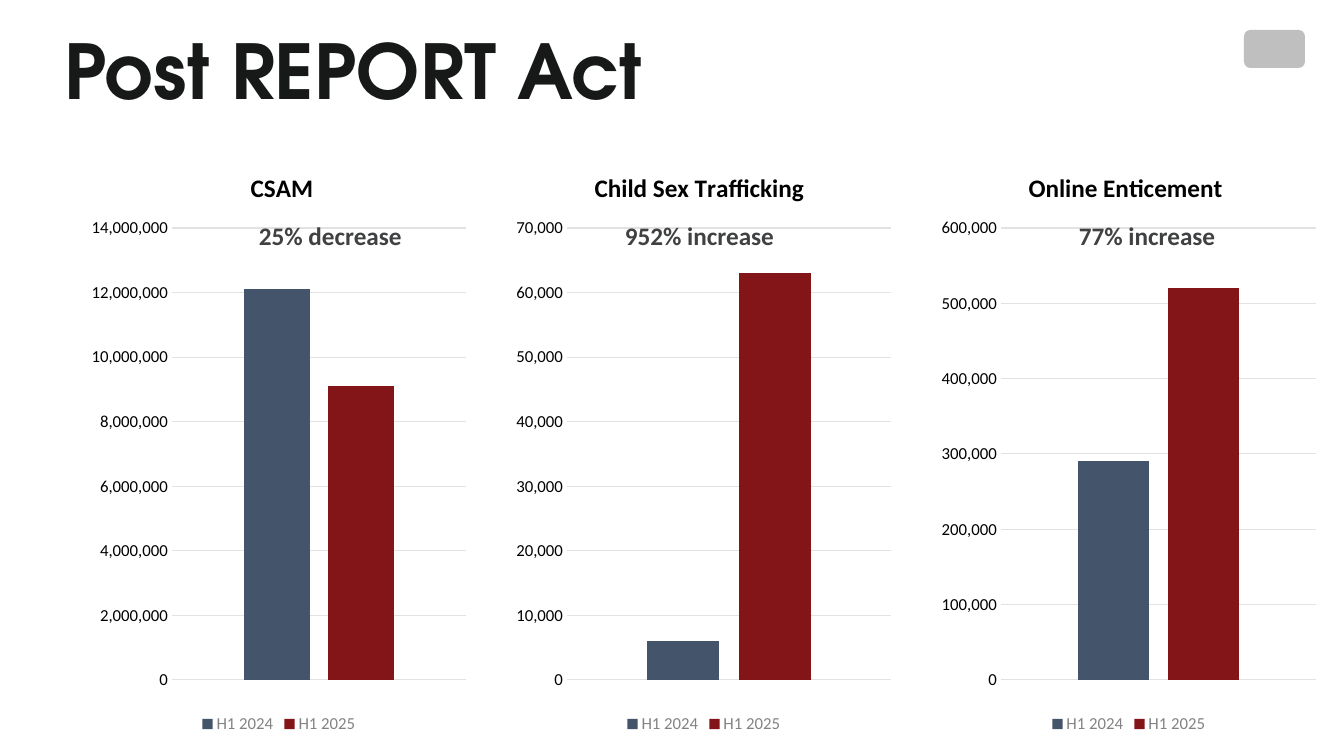
"""Build the Post REPORT Act slide with three half-year comparison charts."""
from dataclasses import dataclass

from lxml import etree
from pptx import Presentation
from pptx.chart.data import CategoryChartData
from pptx.dml.color import RGBColor
from pptx.enum.chart import XL_CHART_TYPE, XL_LEGEND_POSITION, XL_TICK_MARK
from pptx.enum.shapes import MSO_SHAPE
from pptx.enum.text import MSO_ANCHOR, MSO_AUTO_SIZE, PP_ALIGN
from pptx.oxml.ns import qn
from pptx.util import Pt

COLUMN = XL_CHART_TYPE.COLUMN_CLUSTERED
LEGEND_BOTTOM = XL_LEGEND_POSITION.BOTTOM
NO_TICK = XL_TICK_MARK.NONE
ROUNDED = MSO_SHAPE.ROUNDED_RECTANGLE
TOP = MSO_ANCHOR.TOP
NO_AUTOSIZE = MSO_AUTO_SIZE.NONE
LEFT = PP_ALIGN.LEFT

EMU_PER_PX = 914400 / 100.8
TITLE_ONLY = 5
CHART_LEFT, CHART_TOP, CHART_STEP = 84, 140, 425
CHART_WIDTH, CHART_HEIGHT = 390, 598
PLOT_TOP, PLOT_RIGHT, PLOT_HEIGHT = 88, 382, 452
HEADING_TOP = 26


@dataclass(frozen=True)
class Theme:
    """Colours, fonts and type sizes of the slide."""
    ink: str = "171919"
    black: str = "000000"
    callout: str = "404142"
    legend: str = "828385"
    grid: str = "E2E2E3"
    emblem: str = "BFBFBF"
    series: tuple = ("44546A", "831417")
    title_font: str = "TeX Gyre Adventor"
    body_font: str = "Calibri"
    title_size: int = 54
    heading_size: int = 18
    label_size: int = 12
    chart_size: int = 10


@dataclass(frozen=True)
class Panel:
    """One comparison: its chart, its axis scale and its callout."""
    heading: str
    heading_x: int
    values: tuple
    maximum: int
    step: int
    plot_x: int
    callout: str
    callout_x: int


PANELS = (
    Panel("CSAM", 162, (12100000, 9100000), 14000000, 2000000, 88, "25% decrease", 249),
    Panel("Child Sex Trafficking", 81, (6000, 63000), 70000, 10000, 58, "952% increase", 615),
    Panel("Online Enticement", 90, (290000, 520000), 600000, 100000, 67, "77% increase", 1069),
)


def px(length):
    """Turn px into EMU."""
    return round(length * EMU_PER_PX)


def place_chart_part(element, index, **fractions):
    """Give a chart part a manual layout in fractions of the chart."""
    for old in element.findall(qn("c:layout")):
        element.remove(old)
    layout = etree.Element(qn("c:layout"))
    manual = etree.SubElement(layout, qn("c:manualLayout"))
    if "w" in fractions:
        etree.SubElement(manual, qn("c:layoutTarget")).set("val", "inner")
    for mode in ("xMode", "yMode"):
        etree.SubElement(manual, qn(f"c:{mode}")).set("val", "edge")
    for name, value in fractions.items():
        etree.SubElement(manual, qn(f"c:{name}")).set("val", f"{value:.4f}")
    element.insert(index, layout)


class SlideBuilder:
    """Draw styled elements on the current slide."""

    def __init__(self, slide, theme):
        self.slide = slide
        self.theme = theme

    def style_font(self, font, size, color, name=None, bold=False):
        """Set the face, size, weight and colour of a font."""
        font.name = name or self.theme.body_font
        font.size = Pt(size)
        font.bold = bold
        font.color.rgb = RGBColor.from_string(color)

    def fill_text(self, frame, text, size, color, name=None):
        """Put one bold left-aligned run into a text frame."""
        frame.word_wrap = True
        frame.auto_size = NO_AUTOSIZE
        frame.vertical_anchor = TOP
        paragraph = frame.paragraphs[0]
        paragraph.alignment = LEFT
        run = paragraph.add_run()
        run.text = text
        self.style_font(run.font, size, color, name, True)

    def title(self, text, left, top, width, height):
        """Move and fill the title placeholder."""
        shape = self.slide.shapes.title
        shape.left, shape.top = px(left), px(top)
        shape.width, shape.height = px(width), px(height)
        self.fill_text(shape.text_frame, text, self.theme.title_size,
                       self.theme.ink, self.theme.title_font)

    def callout(self, text, left, top, width, height):
        """Add a bold callout over a chart."""
        shape = self.slide.shapes.add_textbox(px(left), px(top), px(width), px(height))
        self.fill_text(shape.text_frame, text, self.theme.heading_size, self.theme.callout)

    def emblem(self, left, top, width, height):
        """Add a plain grey emblem."""
        shape = self.slide.shapes.add_shape(ROUNDED, px(left), px(top), px(width), px(height))
        shape.shadow.inherit = False
        shape.fill.solid()
        shape.fill.fore_color.rgb = RGBColor.from_string(self.theme.emblem)
        shape.line.fill.background()

    def column_chart(self, panel, left):
        """Add the column chart of a panel."""
        theme = self.theme
        data = CategoryChartData(number_format="#,##0")
        data.categories = ["1"]
        for name, value in zip(("H1 2024", "H1 2025"), panel.values):
            data.add_series(name, [value])
        chart = self.slide.shapes.add_chart(
            COLUMN, px(left), px(CHART_TOP), px(CHART_WIDTH), px(CHART_HEIGHT), data).chart
        self.style_font(chart.font, theme.chart_size, theme.callout)

        chart.has_title = True
        run = chart.chart_title.text_frame.paragraphs[0].add_run()
        run.text = panel.heading
        self.style_font(run.font, theme.heading_size, theme.black, bold=True)
        place_chart_part(chart.chart_title._element, 1,
                         x=panel.heading_x / CHART_WIDTH, y=HEADING_TOP / CHART_HEIGHT)

        chart.has_legend = True
        chart.legend.position = LEGEND_BOTTOM
        chart.legend.include_in_layout = False
        self.style_font(chart.legend.font, theme.label_size, theme.legend)

        plot = chart.plots[0]
        plot.gap_width, plot.overlap = 219, -27
        plot.vary_by_categories = False
        for series, color in zip(plot.series, theme.series):
            series.format.fill.solid()
            series.format.fill.fore_color.rgb = RGBColor.from_string(color)
        place_chart_part(chart._chartSpace.chart.plotArea, 0,
                         x=panel.plot_x / CHART_WIDTH, y=PLOT_TOP / CHART_HEIGHT,
                         w=(PLOT_RIGHT - panel.plot_x) / CHART_WIDTH,
                         h=PLOT_HEIGHT / CHART_HEIGHT)

        chart.category_axis.visible = False
        axis = chart.value_axis
        axis.minimum_scale, axis.maximum_scale = 0, panel.maximum
        axis.major_unit = panel.step
        axis.major_tick_mark = axis.minor_tick_mark = NO_TICK
        axis.format.line.fill.background()
        grid_line = axis.major_gridlines.format.line
        grid_line.color.rgb = RGBColor.from_string(theme.grid)
        grid_line.width = Pt(0.75)
        axis.tick_labels.number_format = "#,##0"
        axis.tick_labels.number_format_is_linked = False
        self.style_font(axis.tick_labels.font, theme.label_size, theme.black)


def main():
    """Build and save the presentation."""
    presentation = Presentation()
    presentation.slide_width, presentation.slide_height = px(1344), px(756)
    slide = presentation.slides.add_slide(presentation.slide_layouts[TITLE_ONLY])
    builder = SlideBuilder(slide, Theme())
    builder.emblem(1244, 30, 61, 38)
    builder.title("Post REPORT Act", 54, 19, 1203, 102)
    for index, panel in enumerate(PANELS):
        builder.column_chart(panel, CHART_LEFT + index * CHART_STEP)
        builder.callout(panel.callout, panel.callout_x, 215, 178, 40)
    presentation.save("out.pptx")


if __name__ == "__main__":
    main()
